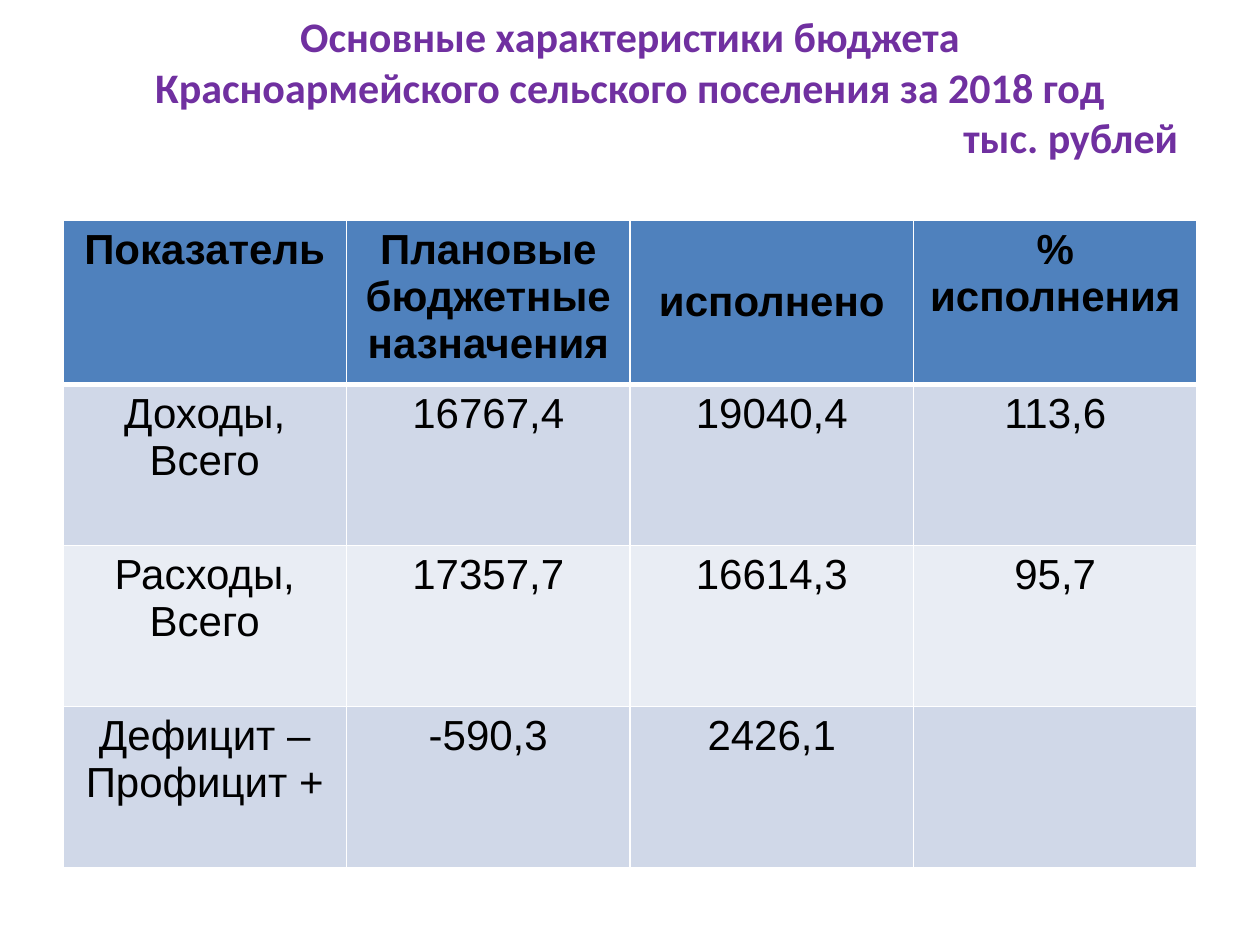
from lxml.etree import SubElement
from pptx import Presentation
from pptx.dml.color import RGBColor
from pptx.enum.text import MSO_ANCHOR, PP_ALIGN as AL
from pptx.oxml.ns import qn
from pptx.util import Pt

PURPLE = RGBColor(0x70, 0x30, 0xA0)
BLACK = RGBColor(0, 0, 0)
WHITE = RGBColor(0xFF, 0xFF, 0xFF)
HEADER = RGBColor(0x4F, 0x81, 0xBD)
BANDS = [RGBColor(0xE9, 0xED, 0xF4), RGBColor(0xD0, 0xD8, 0xE8)]

TITLE = [
    ("Основные характеристики бюджета", AL.CENTER),
    ("Красноармейского сельского поселения за 2018 год", AL.CENTER),
    ("тыс. рублей", AL.RIGHT),
]
ROWS = [
    ["Показатель", "Плановые бюджетные назначения", "исполнено", "%\nисполнения"],
    ["Доходы,\nВсего", "16767,4", "19040,4", "113,6"],
    ["Расходы,\nВсего", "17357,7", "16614,3", "95,7"],
    ["Дефицит –\nПрофицит +", "-590,3", "2426,1", ""],
]
LEFT, WIDTH, COL_W, ROW_H = 36, 648, 162, 92


def write(tf, lines, font, color, bold):
    """Fill a text frame with one paragraph per (text, alignment) pair."""
    for i, (text, align) in enumerate(lines):
        p = tf.paragraphs[0] if i == 0 else tf.add_paragraph()
        p.alignment = align
        for name, value in {"name": font, "size": Pt(24), "bold": bold}.items():
            setattr(p.font, name, value)
        if text:
            r = p.add_run()
            r.text = text
            for name, value in {"name": font, "size": Pt(24), "bold": bold}.items():
                setattr(r.font, name, value)
            r.font.color.rgb = color


def add_border(cell, side, width):
    ln = SubElement(cell._tc.get_or_add_tcPr(), qn(f"a:ln{side}"), w=str(Pt(width)))
    fill = SubElement(ln, qn("a:solidFill"))
    SubElement(fill, qn("a:srgbClr"), val=str(WHITE))


prs = Presentation()
prs.slide_width, prs.slide_height = Pt(720), Pt(540)
s = prs.slides.add_slide(prs.slide_layouts[6])

# Title: the deep bottom margin lifts the three lines
tf = s.shapes.add_textbox(Pt(LEFT), Pt(21.6), Pt(WIDTH), Pt(85)).text_frame
frame_format = {
    "word_wrap": True,
    "vertical_anchor": MSO_ANCHOR.MIDDLE,
    "margin_left": Pt(10.8),
    "margin_right": Pt(10.8),
    "margin_bottom": Pt(33),
}
for name, value in frame_format.items():
    setattr(tf, name, value)
write(tf, TITLE, "Calibri", PURPLE, True)

# Budget table
table = s.shapes.add_table(
    len(ROWS), len(ROWS[0]), Pt(LEFT), Pt(126), Pt(WIDTH), Pt(ROW_H * len(ROWS))
).table
for col in table.columns:
    col.width = Pt(COL_W)
for i, row in enumerate(ROWS):
    table.rows[i].height = Pt(ROW_H)
    for j, text in enumerate(row):
        cell = table.cell(i, j)
        lines = [(line, AL.CENTER) for line in text.split("\n")]
        write(cell.text_frame, lines, "Arial", BLACK, i == 0)
        borders = {"L": 1, "R": 1, "T": 3 if i == 1 else 1, "B": 3 if i == 0 else 1}
        for side, width in borders.items():
            add_border(cell, side, width)
        cell.fill.solid()
        cell.fill.fore_color.rgb = HEADER if i == 0 else BANDS[i % 2]
table.cell(0, 2).margin_top = Pt(33)  # "исполнено" sits one line lower

prs.save("out.pptx")
